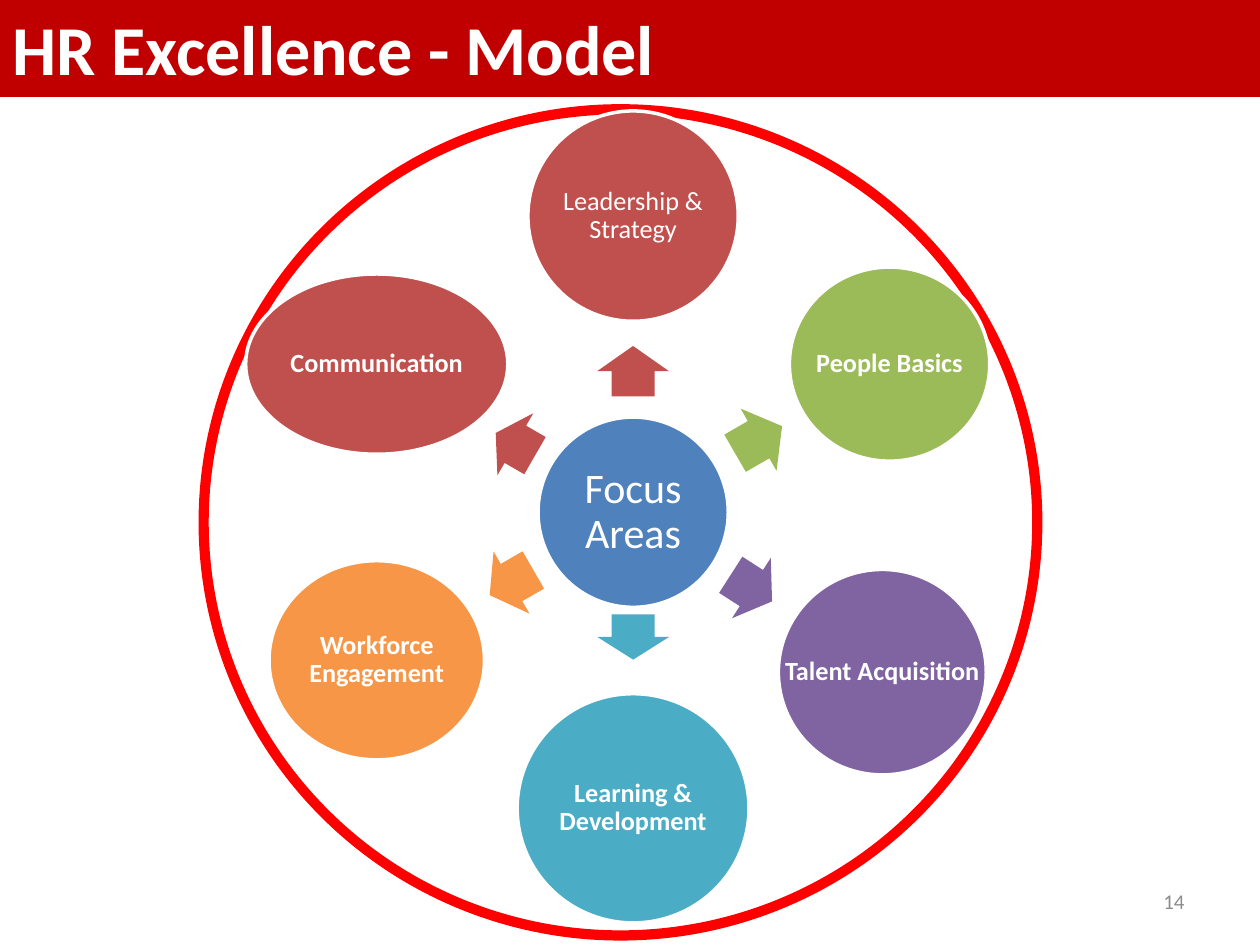
from dataclasses import dataclass
from math import cos, radians, sin

from pptx import Presentation
from pptx.dml.color import RGBColor
from pptx.enum.shapes import MSO_SHAPE as Preset
from pptx.enum.text import MSO_ANCHOR as Anchor, PP_ALIGN as Align
from pptx.util import Pt

WHITE = RGBColor(0xFF, 0xFF, 0xFF)
GRAY = RGBColor(0x8C, 0x8C, 0x8C)
RING_RED = RGBColor(0xFF, 0x00, 0x00)
TITLE_RED = RGBColor(0xC0, 0x00, 0x00)
BLUE = RGBColor(0x4F, 0x81, 0xBD)
BRICK = RGBColor(0xC0, 0x50, 0x4D)
GREEN = RGBColor(0x9B, 0xBB, 0x59)
PURPLE = RGBColor(0x80, 0x64, 0xA2)
TEAL = RGBColor(0x4B, 0xAC, 0xC6)
ORANGE = RGBColor(0xF7, 0x96, 0x46)

FONT = "Calibri"
HUB_X, HUB_Y = 361.8, 292.7
HUB_SIZE = 108.7
ORBIT = 169.2
ARROW_HEIGHT = 41


@dataclass
class FocusArea:
    """A circle around the hub and the arrow that points to it."""

    label: str
    color: RGBColor
    angle: float
    width: float
    height: float
    arrow_orbit: float
    arrow_length: float
    bold: bool = True
    wrap: bool = False
    preset: Preset = Preset.FLOWCHART_CONNECTOR


FOCUS_AREAS = [
    FocusArea("Leadership & Strategy", BRICK, 270, 120.2, 120.2, 80.6, 28.8,
              bold=False, wrap=True, preset=Preset.OVAL),
    FocusArea("People Basics", GREEN, 330, 114.5, 110.9, 82.8, 31),
    FocusArea("Talent Acquisition", PURPLE, 32.7, 118.8, 117.4, 80.3, 28.1),
    FocusArea("Learning & Development", TEAL, 90, 132.5, 131, 71.3, 25.9, wrap=True),
    FocusArea("Workforce Engagement", ORANGE, 150, 123.1, 113.8, 80.3, 28.8, wrap=True),
    FocusArea("Communication", BRICK, 210, 149.8, 103, 77.7, 25.9),
]


def polar(angle, radius):
    """Return the point at an angle and a distance from the hub."""
    turn = radians(angle)
    return HUB_X + radius * cos(turn), HUB_Y + radius * sin(turn)


def paint(shape, fill, line=None):
    """Give a shape a solid fill and an optional outline."""
    shape.fill.solid()
    shape.fill.fore_color.rgb = fill
    if line is None:
        shape.line.fill.background()
    else:
        shape.line.color.rgb = line
        shape.line.width = Pt(2)


def write(shape, text, size, color, align, bold=False):
    """Write one vertically centred paragraph into a shape."""
    shape.text_frame.vertical_anchor = Anchor.MIDDLE
    paragraph = shape.text_frame.paragraphs[0]
    paragraph.alignment = align
    run = paragraph.add_run()
    run.text = text
    run.font.name = FONT
    run.font.size = Pt(size)
    run.font.bold = bold
    run.font.color.rgb = color
    return paragraph


def add_centred(slide, preset, center, width, height):
    """Add a preset shape around a centre point."""
    x, y = center
    shape = slide.shapes.add_shape(
        preset, Pt(x - width / 2), Pt(y - height / 2), Pt(width), Pt(height))
    shape.shadow.inherit = False
    return shape


def add_circle(slide, preset, center, width, height, color, text, size, bold, wrap):
    """Add a labelled circle with a white outline."""
    circle = add_centred(slide, preset, center, width, height)
    paint(circle, color, WHITE)
    frame = circle.text_frame
    frame.word_wrap = wrap
    frame.margin_left = frame.margin_right = frame.margin_top = frame.margin_bottom = 0
    paragraph = write(circle, text, size, WHITE, Align.CENTER, bold)
    paragraph.line_spacing = 0.9


def add_arrow(slide, area):
    """Add the arrow that points from the hub to a focus area."""
    arrow = add_centred(slide, Preset.RIGHT_ARROW, polar(area.angle, area.arrow_orbit),
                        area.arrow_length, ARROW_HEIGHT)
    arrow.rotation = area.angle
    arrow.adjustments[0] = 0.6
    arrow.adjustments[1] = 0.5
    paint(arrow, area.color)


def add_ring(slide):
    """Add the thin red ring around the model."""
    ring = add_centred(slide, Preset.DONUT, (354.6, 298.5), 480.2, 475.9)
    ring.adjustments[0] = 0.008
    paint(ring, RING_RED, RING_RED)


def format_title(title, text):
    """Turn the title placeholder into a full-width banner."""
    title.left, title.top, title.width, title.height = Pt(0), Pt(0), Pt(720), Pt(54.7)
    paint(title, TITLE_RED, TITLE_RED)
    write(title, text, 40, WHITE, Align.LEFT, bold=True)


def add_page_number(slide, text):
    """Add the page number at the lower right."""
    box = slide.shapes.add_textbox(Pt(516.2), Pt(500.4), Pt(167.8), Pt(28.8))
    box.text_frame.word_wrap = True
    write(box, text, 12, GRAY, Align.RIGHT)


def main():
    """Build the slide and save it."""
    presentation = Presentation()
    presentation.slide_width, presentation.slide_height = Pt(720), Pt(540)
    slide = presentation.slides.add_slide(presentation.slide_layouts[5])
    format_title(slide.shapes.title, "HR Excellence - Model")
    add_ring(slide)
    add_page_number(slide, "14")
    add_circle(slide, Preset.OVAL, (HUB_X, HUB_Y), HUB_SIZE, HUB_SIZE, BLUE,
               "Focus Areas", 24, bold=False, wrap=True)
    for area in FOCUS_AREAS:
        add_arrow(slide, area)
        add_circle(slide, area.preset, polar(area.angle, ORBIT), area.width, area.height,
                   area.color, area.label, 15, area.bold, area.wrap)
    presentation.save("out.pptx")


if __name__ == "__main__":
    main()
